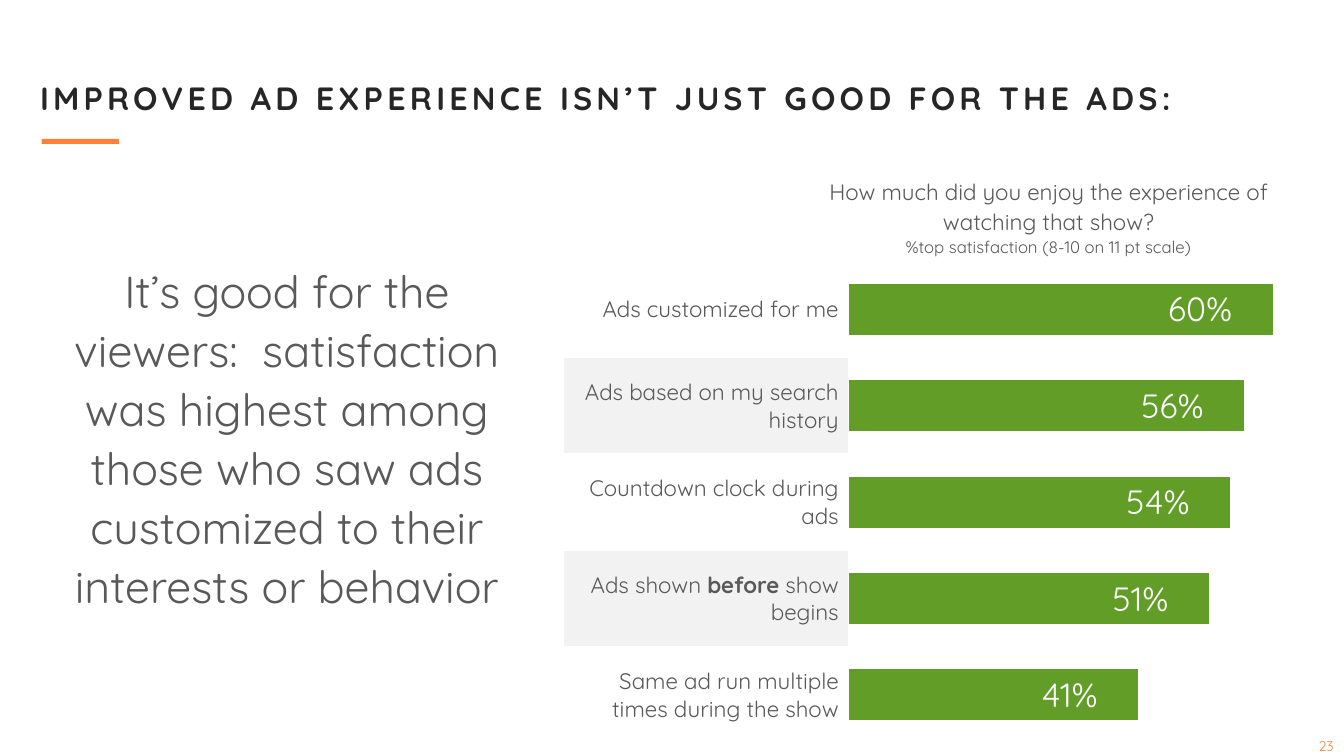
"""Build the slide on viewer satisfaction by ad experience."""
from pptx import Presentation
from pptx.chart.data import CategoryChartData
from pptx.dml.color import RGBColor
from pptx.enum.chart import XL_CHART_TYPE, XL_LABEL_POSITION
from pptx.enum.shapes import MSO_SHAPE
from pptx.enum.text import MSO_ANCHOR, PP_ALIGN
from pptx.oxml import parse_xml
from pptx.oxml.ns import nsdecls
from pptx.util import Cm, Pt

BAR = XL_CHART_TYPE.BAR_CLUSTERED
INSIDE_END = XL_LABEL_POSITION.INSIDE_END
RECTANGLE = MSO_SHAPE.RECTANGLE
TOP, MIDDLE, BOTTOM = MSO_ANCHOR.TOP, MSO_ANCHOR.MIDDLE, MSO_ANCHOR.BOTTOM
LEFT, CENTER, RIGHT = PP_ALIGN.LEFT, PP_ALIGN.CENTER, PP_ALIGN.RIGHT

FONT = "Quicksand"
COLORS = {
    "title": "262626",
    "text": "595959",
    "accent": "FF8139",
    "bar": "629E27",
    "white": "FFFFFF",
    "band": "F2F2F2",
}
AD_TYPES = [
    ([("Ads customized for me", False)], 0.60),
    ([("Ads based on my search history", False)], 0.56),
    ([("Countdown clock during ads", False)], 0.54),
    ([("Ads shown ", False), ("before", True), (" show begins", False)], 0.51),
    ([("Same ad run multiple times during the show", False)], 0.41),
]
CHART_TOP, CHART_HEIGHT = 6.58, 12.15


def color(name):
    return RGBColor.from_string(COLORS[name])


def format_font(font, size, color_name, bold=False):
    font.name = FONT
    font.size = Pt(size)
    font.bold = bold
    font.color.rgb = color(color_name)


def add_span(para, text, size, color_name, bold=False, tracking=0):
    span = para.add_run()
    span.text = text
    format_font(span.font, size, color_name, bold)
    if tracking:
        span.font._element.set("spc", str(tracking * 100))


def add_text(page, lines, place, color_name="text", align=CENTER, anchor=MIDDLE,
             spacing=1.1, bold=False, tracking=0):
    box = page.shapes.add_textbox(*map(Cm, place))
    frame = box.text_frame
    frame.word_wrap = True
    frame.vertical_anchor = anchor
    for index, (text, size) in enumerate(lines):
        para = frame.add_paragraph() if index else frame.paragraphs[0]
        para.alignment = align
        para.line_spacing = spacing
        add_span(para, text, size, color_name, bold, tracking)


def add_accent(page, place):
    accent = page.shapes.add_shape(RECTANGLE, *map(Cm, place))
    accent.shadow.inherit = False
    accent.fill.solid()
    accent.fill.fore_color.rgb = color("accent")
    accent.line.fill.background()


def set_plot_area(chart, **edges):
    parts = "".join(f'<c:{name} val="{value}"/>' for name, value in edges.items())
    layout = parse_xml(
        f'<c:layout {nsdecls("c")}><c:manualLayout><c:layoutTarget val="inner"/>'
        f'<c:xMode val="edge"/><c:yMode val="edge"/>{parts}'
        "</c:manualLayout></c:layout>")
    area = chart.plots[0]._element.getparent()
    for existing in area.xpath("c:layout"):
        area.remove(existing)
    area.insert(0, layout)


def add_satisfaction_chart(page):
    data = CategoryChartData(number_format="0%")
    data.categories = [str(number + 1) for number in range(len(AD_TYPES))]
    data.add_series("Series 1", [value for _, value in AD_TYPES])
    place = map(Cm, (12.6, CHART_TOP, 21.26, CHART_HEIGHT))
    chart = page.shapes.add_chart(BAR, *place, data).chart
    chart.has_legend = False
    chart.has_title = False
    chart.font.name = FONT
    chart.font.size = Pt(10)
    chart.category_axis.reverse_order = True
    chart.value_axis.minimum_scale = 0
    chart.value_axis.maximum_scale = 0.7
    for axis in (chart.category_axis, chart.value_axis):
        axis.has_major_gridlines = False
        axis.visible = False
    plot = chart.plots[0]
    plot.gap_width = 89
    plot.vary_by_categories = False
    bars = plot.series[0].format
    bars.fill.solid()
    bars.fill.fore_color.rgb = color("bar")
    plot.has_data_labels = True
    labels = plot.data_labels
    labels.show_value = True
    labels.position = INSIDE_END
    labels.number_format = "0%_W_)"
    labels.number_format_is_linked = False
    format_font(labels.font, 24, "white")
    set_plot_area(chart, x=0.413, y=0, w=0.587, h=1)


def add_label_table(page):
    count = len(AD_TYPES)
    place = map(Cm, (14.2, CHART_TOP, 7.19, CHART_HEIGHT))
    table = page.shapes.add_table(count, 1, *place).table
    table.first_row = False
    table.horz_banding = False
    for index, (spans, _) in enumerate(AD_TYPES):
        cell = table.cell(index, 0)
        cell.fill.solid()
        cell.fill.fore_color.rgb = color("band" if index % 2 else "white")
        cell.vertical_anchor = MIDDLE
        para = cell.text_frame.paragraphs[0]
        para.alignment = RIGHT
        for text, bold in spans:
            add_span(para, text, 16, "text", bold)


def main():
    deck = Presentation()
    deck.slide_width, deck.slide_height = Cm(33.87), Cm(19.05)
    page = deck.slides.add_slide(deck.slide_layouts[6])
    add_accent(page, (1.05, 3.5, 1.95, 0.13))
    add_text(page, [("IMPROVED AD EXPERIENCE ISN’T JUST GOOD FOR THE ADS:", 23)],
             (0.76, 1.32, 32.3, 2.18), color_name="title", align=LEFT,
             bold=True, tracking=3)
    add_satisfaction_chart(page)
    add_label_table(page)
    add_text(page, [("It’s good for the viewers:  satisfaction was highest among "
                     "those who saw ads customized to their interests or behavior", 32)],
             (0.76, 3.5, 12.95, 14.94))
    add_text(page, [("How much did you enjoy the experience of watching that show?", 16),
                    ("%top satisfaction (8-10 on 11 pt scale)", 12)],
             (20.14, 4.42, 12.57, 2.18), anchor=BOTTOM)
    add_text(page, [("23", 10)], (32.97, 18.47, 0.9, 0.58), color_name="accent",
             anchor=TOP, spacing=1)
    deck.save("out.pptx")


if __name__ == "__main__":
    main()
